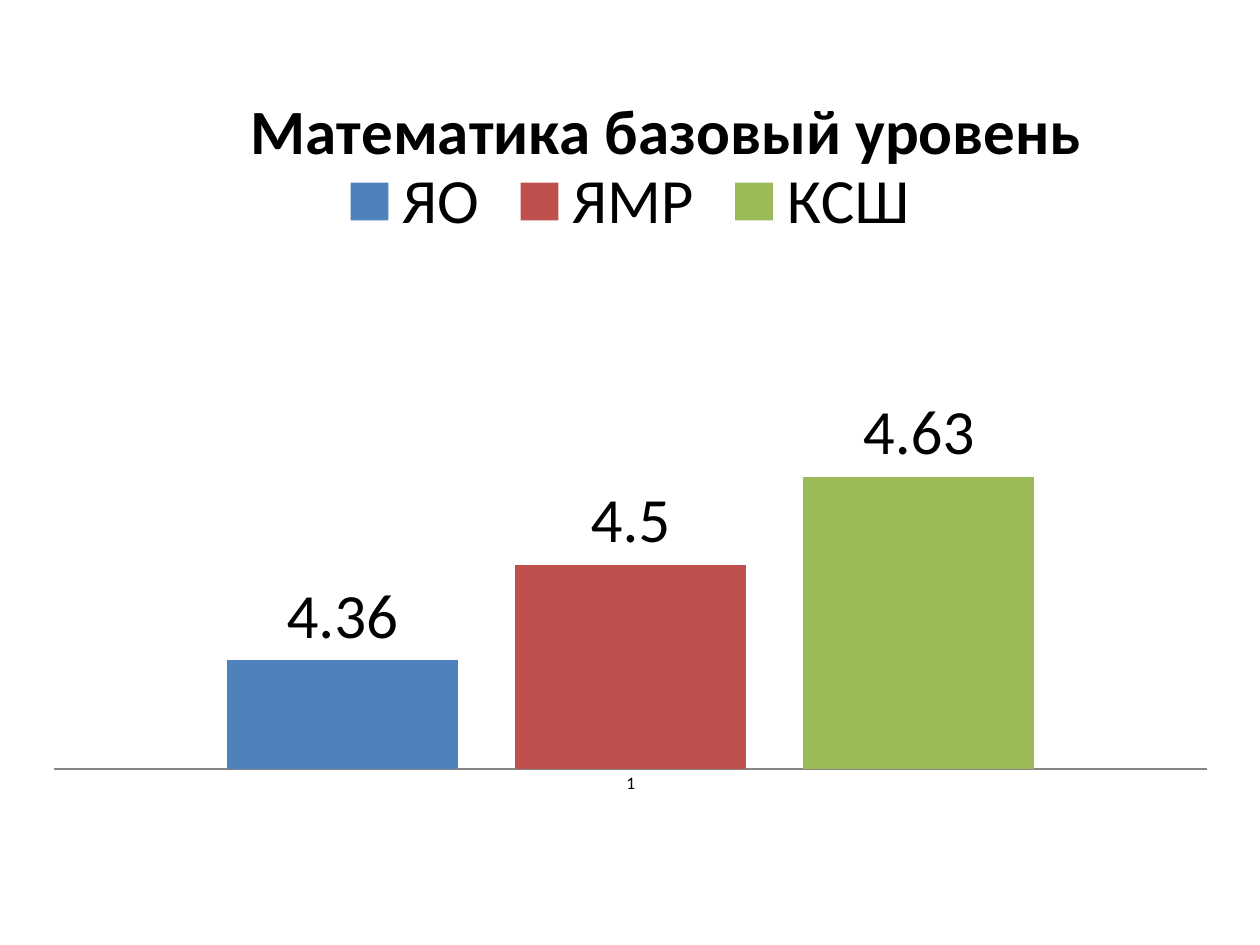
from lxml import etree
from pptx import Presentation
from pptx.chart.data import CategoryChartData
from pptx.dml.color import RGBColor
from pptx.enum.chart import XL_CHART_TYPE, XL_LABEL_POSITION, XL_LEGEND_POSITION, XL_TICK_MARK
from pptx.oxml.ns import qn
from pptx.util import Inches, Pt

CLUSTERED = XL_CHART_TYPE.COLUMN_CLUSTERED
OUTSIDE_END = XL_LABEL_POSITION.OUTSIDE_END
LEGEND_TOP = XL_LEGEND_POSITION.TOP
NO_TICK = XL_TICK_MARK.NONE

FONT = "Calibri"
LARGE, SMALL = 36, 10
TITLE = "Математика базовый уровень"
SCORES = {"ЯО": 4.36, "ЯМР": 4.5, "КСШ": 4.63}
COLORS = {
    "text": "000000",
    "axis": "868686",
    "ЯО": "4F81BD",
    "ЯМР": "C0504D",
    "КСШ": "9BBB59",
}


def color(name):
    return RGBColor.from_string(COLORS[name])


def style_font(font, size, bold=False):
    font.name = FONT
    font.size = Pt(size)
    font.bold = bold
    font.color.rgb = color("text")


def place(parent, index, shares, inner=False):
    for old in parent.findall(qn("c:layout")):
        parent.remove(old)
    layout = etree.Element(qn("c:layout"))
    manual = etree.SubElement(layout, qn("c:manualLayout"))
    if inner:
        etree.SubElement(manual, qn("c:layoutTarget"), val="inner")
    for side in ("xMode", "yMode"):
        etree.SubElement(manual, qn(f"c:{side}"), val="edge")
    for side, share in zip("xywh", shares):
        etree.SubElement(manual, qn(f"c:{side}"), val=str(share))
    parent.insert(index, layout)


def add_score_chart(page, width, height):
    data = CategoryChartData()
    data.categories = ["1"]
    for name, score in SCORES.items():
        data.add_series(name, [score])
    chart = page.shapes.add_chart(CLUSTERED, 0, 0, width, height, data).chart
    style_font(chart.font, SMALL)
    plot = chart.plots[0]
    plot.gap_width = 150
    plot.overlap = -25
    plot.vary_by_categories = False
    place(chart.plots[0]._element.getparent(), 0, (0.043, 0.454, 0.915, 0.36), inner=True)
    return chart


def add_title(chart):
    frame = chart.chart_title.text_frame
    span = frame.paragraphs[0].add_run()
    span.text = TITLE
    style_font(span.font, LARGE, bold=True)
    chart.chart_title.include_in_layout = False
    place(chart.chart_title._element, 1, (0.19, 0.08))


def add_legend(chart):
    chart.has_legend = True
    chart.legend.position = LEGEND_TOP
    chart.legend.include_in_layout = False
    style_font(chart.legend.font, LARGE)


def style_axes(chart):
    values = chart.value_axis
    values.minimum_scale = 4.2
    values.maximum_scale = 4.7
    values.has_major_gridlines = False
    values.visible = False
    categories = chart.category_axis
    categories.major_tick_mark = NO_TICK
    categories.minor_tick_mark = NO_TICK
    categories.format.line.color.rgb = color("axis")
    style_font(categories.tick_labels.font, SMALL)


def style_series(series):
    series.format.fill.solid()
    series.format.fill.fore_color.rgb = color(series.name)
    series.invert_if_negative = False
    labels = series.data_labels
    labels.show_value = True
    labels.position = OUTSIDE_END
    style_font(labels.font, LARGE)


def main():
    deck = Presentation()
    deck.slide_width, deck.slide_height = Inches(10), Inches(7.5)
    page = deck.slides.add_slide(deck.slide_layouts[6])
    chart = add_score_chart(page, deck.slide_width, deck.slide_height)
    add_title(chart)
    add_legend(chart)
    style_axes(chart)
    for series in chart.plots[0].series:
        style_series(series)
    deck.save("out.pptx")


if __name__ == "__main__":
    main()
